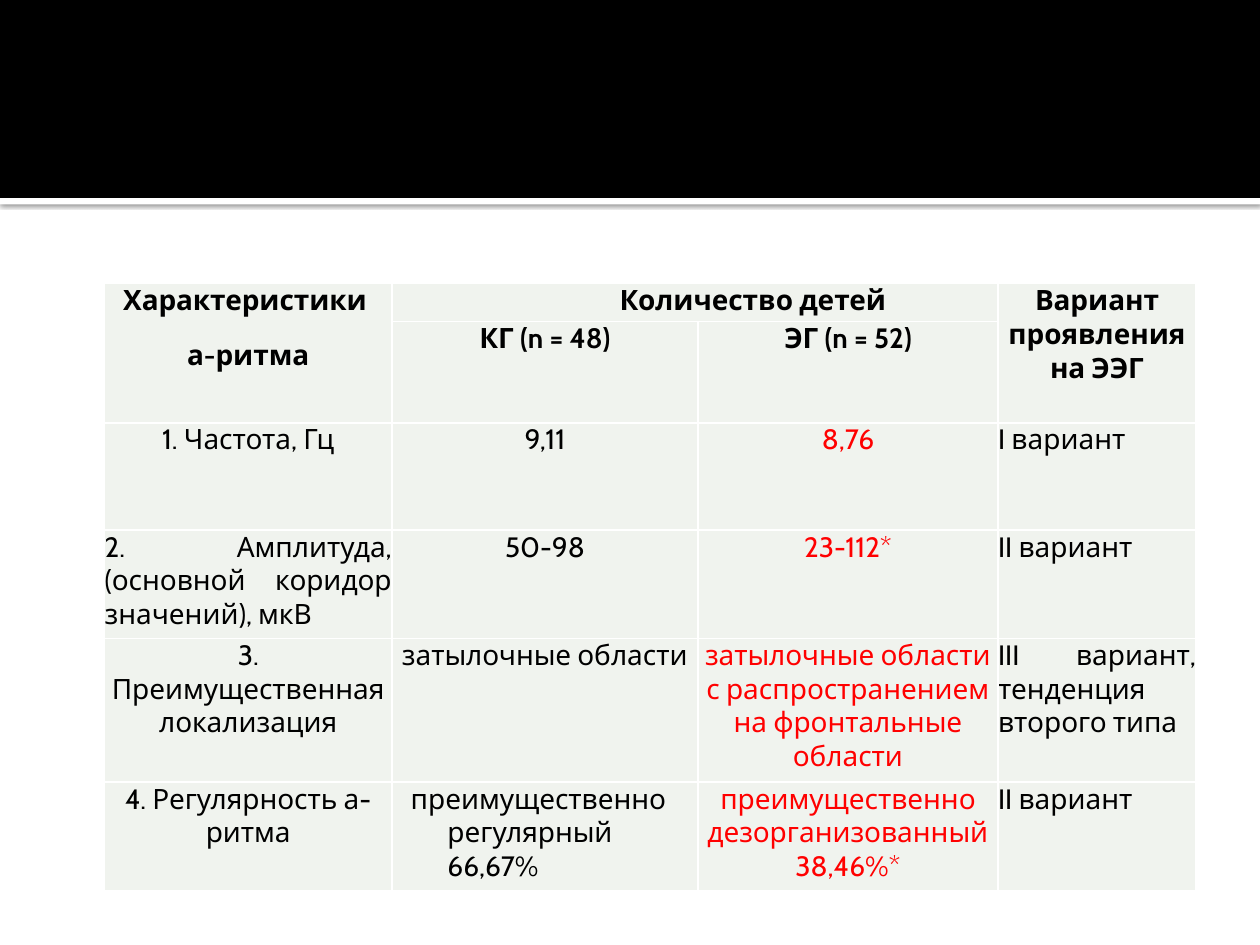
import pptx
import pptx.dml.color
import pptx.enum.shapes
import pptx.enum.text
import pptx.oxml
import pptx.oxml.ns
import pptx.util

Cm = pptx.util.Cm
Pt = pptx.util.Pt
RGBColor = pptx.dml.color.RGBColor
ALIGN = pptx.enum.text.PP_ALIGN

BLACK = RGBColor(0x00, 0x00, 0x00)
WHITE = RGBColor(0xFF, 0xFF, 0xFF)
RED = RGBColor(0xFF, 0x00, 0x00)
PALE = RGBColor(0xF0, 0xF3, 0xEE)

NAMESPACE = pptx.oxml.ns.nsdecls("a")
COLUMN_WIDTHS = [5.79, 6.17, 6.05, 3.99]
ROW_HEIGHTS = [0.76, 1.42, 2.16, 2.18, 2.9, 2.18]
HANGING = -0.74

HEADINGS = [
    (0, 0, 1, 0, ["Характеристики ", "а-ритма"], 0),
    (0, 1, 0, 2, ["Количество детей"], 2.34),
    (0, 3, 1, 3, ["Вариант проявления на ЭЭГ"], 0),
    (1, 1, 1, 1, ["КГ (n = 48)"], 0),
    (1, 2, 1, 2, ["ЭГ (n = 52)"], 0),
]
FINDINGS = [
    ["1. Частота, Гц", "9,11", "8,76", "I вариант"],
    ["2. Амплитуда, (основной коридор значений), мкВ", "50-98", "23-112*", "II вариант"],
    ["3. Преимущественная локализация", "затылочные области",
     "затылочные области с распространением на фронтальные области",
     "III вариант, тенденция второго типа"],
    ["4. Регулярность а-ритма", "преимущественно регулярный 66,67%",
     "преимущественно дезорганизованный 38,46%*", "II вариант"],
]
COLUMN_FORMATS = [
    {"align": ALIGN.CENTER},
    {"align": ALIGN.CENTER},
    {"align": ALIGN.CENTER, "color": RED},
    {"align": ALIGN.JUSTIFY},
]
EXCEPTIONS = {
    (1, 0): {"align": ALIGN.JUSTIFY},
    (3, 1): {"align": ALIGN.LEFT, "margin": 1.12},
}


class SlideBuilder:
    font_format = {"name": "Cabin", "size": Pt(16)}
    cell_format = {"margin_left": 0, "margin_right": 0, "margin_top": 0, "margin_bottom": 0}
    table_format = {"first_row": False, "horz_banding": False}

    def __init__(self, slide):
        self.slide = slide

    def apply(self, target, values):
        for name, value in values.items():
            setattr(target, name, value)

    def band(self, top, height, color):
        band = self.slide.shapes.add_shape(
            pptx.enum.shapes.MSO_SHAPE.RECTANGLE, 0, Cm(top), Cm(25.4), Cm(height))
        band.shadow.inherit = False
        band.fill.solid()
        band.fill.fore_color.rgb = color
        band.line.fill.background()
        return band

    def shadow(self, band):
        effects = band._element.spPr.find(pptx.oxml.ns.qn("a:effectLst"))
        effects.append(pptx.oxml.parse_xml(
            f'<a:outerShdw {NAMESPACE} blurRad="{Pt(2.5)}" dist="{Pt(0.8)}" dir="5400000" '
            'algn="tl" rotWithShape="0"><a:srgbClr val="000000"><a:alpha val="60000"/>'
            '</a:srgbClr></a:outerShdw>'))

    def table(self, left, top, widths, heights):
        table = self.slide.shapes.add_table(
            len(heights), len(widths), Cm(left), Cm(top),
            Cm(sum(widths)), Cm(sum(heights))).table
        self.apply(table, self.table_format)
        for column, width in zip(table.columns, widths):
            column.width = Cm(width)
        for row, height in zip(table.rows, heights):
            row.height = Cm(height)
        for cell in table.iter_cells():
            self.apply(cell, self.cell_format)
            cell.fill.solid()
            cell.fill.fore_color.rgb = PALE
            self.borders(cell)
        return table

    def borders(self, cell):
        properties = cell._tc.get_or_add_tcPr()
        for position, side in enumerate(("lnL", "lnR", "lnT", "lnB")):
            properties.insert(position, pptx.oxml.parse_xml(
                f'<a:{side} {NAMESPACE} w="{Pt(1)}"><a:solidFill>'
                f'<a:srgbClr val="{WHITE}"/></a:solidFill></a:{side}>'))

    def cell_text(self, cell, lines, align=ALIGN.CENTER, color=BLACK, bold=False,
                  margin=0, indent=0):
        frame = cell.text_frame
        for number, line in enumerate(lines):
            paragraph = frame.add_paragraph() if number else frame.paragraphs[0]
            if number:
                paragraph.space_before = Pt(12)
            paragraph.alignment = align
            properties = paragraph._p.get_or_add_pPr()
            properties.set("marL", str(Cm(margin)))
            properties.set("indent", str(Cm(indent)))
            run = paragraph.add_run()
            run.text = line
            self.apply(run.font, {**self.font_format, "bold": bold})
            run.font.color.rgb = color


def main():
    presentation = pptx.Presentation()
    presentation.slide_width = Cm(25.4)
    presentation.slide_height = Cm(19.05)
    builder = SlideBuilder(presentation.slides.add_slide(presentation.slide_layouts[6]))

    divider = builder.band(3.99, 0.13, WHITE)
    builder.shadow(divider)
    builder.band(0, 3.99, BLACK)

    rhythm = builder.table(2.11, 5.72, COLUMN_WIDTHS, ROW_HEIGHTS)
    for top, left, bottom, right, lines, margin in HEADINGS:
        heading = rhythm.cell(top, left)
        if (top, left) != (bottom, right):
            heading.merge(rhythm.cell(bottom, right))
        builder.cell_text(heading, lines, bold=True, margin=margin)

    for row, finding in enumerate(FINDINGS):
        for column, wording in enumerate(finding):
            style = {**COLUMN_FORMATS[column], **EXCEPTIONS.get((row, column), {})}
            builder.cell_text(rhythm.cell(row + 2, column), [wording], indent=HANGING, **style)

    presentation.save("out.pptx")


if __name__ == "__main__":
    main()
